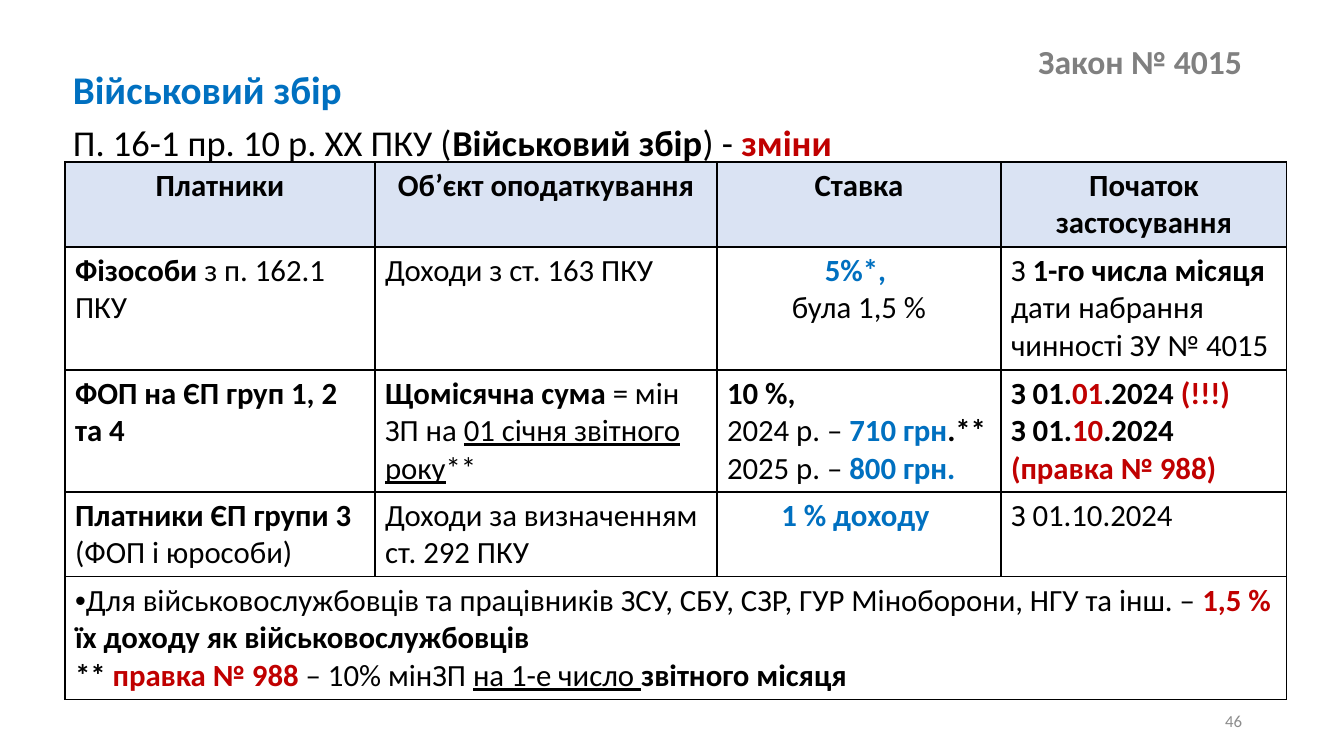
from functools import partial

from lxml.etree import SubElement
from pptx import Presentation
from pptx.dml.color import RGBColor
from pptx.enum.text import MSO_ANCHOR as Anchor, PP_ALIGN as Align
from pptx.oxml.ns import qn
from pptx.util import Emu, Pt

EMU_PER_PX = 914400 / 100.8
FONT = "Calibri"
BLACK = RGBColor(0x00, 0x00, 0x00)
BLUE = RGBColor(0x00, 0x70, 0xC0)
RED = RGBColor(0xC0, 0x00, 0x00)
GREY = RGBColor(0x80, 0x80, 0x80)
PAGE_GREY = RGBColor(0x8C, 0x8C, 0x8C)
HEADER_FILL = RGBColor(0xDA, 0xE3, 0xF3)

COLUMNS = [310, 342, 284, 286]
ROWS = [85, 123, 122, 85, 123]
HEADINGS = ["Платники", "Об’єкт оподаткування", "Ставка", "Початок застосування"]


def px(length):
    return Emu(round(length * EMU_PER_PX))


def styled(text, color=BLACK, bold=False, underline=False, size=None):
    return text, dict(color=color, bold=bold, underline=underline, size=size)


plain = styled
strong = partial(styled, bold=True)
blue = partial(strong, color=BLUE)
red = partial(strong, color=RED)
underlined = partial(styled, underline=True)


def write_run(paragraph, text, *, size, color=BLACK, bold=False, underline=False):
    run = paragraph.add_run()
    run.text = text
    font = run.font
    font.name, font.size = FONT, Pt(size)
    font.bold, font.underline = bold, underline
    font.color.rgb = color


def write_lines(frame, lines, size, align=Align.LEFT, before=0, spacing=1.0):
    for index, line in enumerate(lines):
        paragraph = frame.add_paragraph() if index else frame.paragraphs[0]
        paragraph.alignment = align
        paragraph.space_before = Pt(before)
        paragraph.line_spacing = spacing
        for text, look in line:
            write_run(paragraph, text, **{**look, "size": look["size"] or size})


def add_text(slide, box, lines, size, anchor=Anchor.TOP, **layout):
    frame = slide.shapes.add_textbox(*map(px, box)).text_frame
    frame.word_wrap = True
    frame.vertical_anchor = anchor
    write_lines(frame, lines, size, **layout)


def add_borders(cell):
    properties = cell._tc.get_or_add_tcPr()
    for position, side in enumerate(("lnL", "lnR", "lnT", "lnB")):
        border = properties.makeelement(qn(f"a:{side}"), {"w": str(Pt(1))})
        fill = SubElement(border, qn("a:solidFill"))
        SubElement(fill, qn("a:srgbClr"), val=str(BLACK))
        properties.insert(position, border)


def add_bullet(paragraph):
    properties = paragraph._p.get_or_add_pPr()
    properties.set("marL", "0")
    properties.set("indent", "0")
    SubElement(properties, qn("a:buFont"), typeface="Arial")
    SubElement(properties, qn("a:buChar"), char="•")


def add_levy_table(slide, rows, notes):
    table = slide.shapes.add_table(
        len(ROWS), len(COLUMNS), px(65), px(162), px(sum(COLUMNS)), px(sum(ROWS))
    ).table
    for column, width in zip(table.columns, COLUMNS):
        column.width = px(width)
    for row, height in zip(table.rows, ROWS):
        row.height = px(height)
    for cell in table.iter_cells():
        cell.fill.background()
        add_borders(cell)
    for column, heading in enumerate(HEADINGS):
        cell = table.cell(0, column)
        cell.fill.solid()
        cell.fill.fore_color.rgb = HEADER_FILL
        write_lines(cell.text_frame, [[strong(heading)]], 22, Align.CENTER)
    for row, (rate_align, *contents) in enumerate(rows, 1):
        for column, lines in enumerate(contents):
            align = rate_align if HEADINGS[column] == "Ставка" else Align.LEFT
            write_lines(table.cell(row, column).text_frame, lines, 22, align)
    footer = table.cell(len(ROWS) - 1, 0)
    footer.merge(table.cell(len(ROWS) - 1, len(COLUMNS) - 1))
    write_lines(footer.text_frame, notes, 22)
    add_bullet(footer.text_frame.paragraphs[0])


def main():
    deck = Presentation()
    deck.slide_width, deck.slide_height = px(1344), px(756)
    slide = deck.slides.add_slide(deck.slide_layouts[6])

    add_text(slide, (749, 40, 503, 47), [[strong("Закон № 4015", color=GREY)]], 24,
             anchor=Anchor.MIDDLE, align=Align.RIGHT, spacing=0.9)
    add_text(slide, (63, 60, 1231, 114), [
        [blue("Військовий збір", size=28)],
        [plain("П. 16-1 пр. 10 р. ХХ ПКУ ("), strong("Військовий збір"),
         plain(") - "), red("зміни")],
    ], 26, before=6)

    rows = [
        (Align.CENTER,
         [[strong("Фізособи"), plain(" з п. 162.1 ПКУ")]],
         [[plain("Доходи з ст. 163 ПКУ")]],
         [[blue("5%*, ")], [plain("була 1,5 %")]],
         [[plain("З "), strong("1-го числа місяця "),
           plain("дати набрання чинності ЗУ № 4015")]]),
        (Align.LEFT,
         [[strong("ФОП на ЄП груп 1, 2 та 4")]],
         [[strong("Щомісячна сума "), plain("= мін ЗП на "),
           underlined("01 січня звітного року"), plain("**")]],
         [[strong("10 %,")],
          [plain("2024 р. – "), blue("710 грн"), strong(".**")],
          [plain("2025 р. – "), blue("800 грн.")]],
         [[strong("З 01."), red("01"), strong(".2024 "), red("(!!!)")],
          [strong("З 01."), red("10"), strong(".2024 "), red("(правка № 988)")]]),
        (Align.CENTER,
         [[strong("Платники ЄП групи 3 "), plain("(ФОП і юрособи)")]],
         [[plain("Доходи за визначенням ст. 292 ПКУ")]],
         [[blue("1 % доходу ")]],
         [[plain("З 01.10.2024")]]),
    ]
    notes = [
        [plain("Для військовослужбовців та працівників ЗСУ, СБУ, СЗР, "
               "ГУР Міноборони, НГУ та інш. – "),
         red("1,5 %"), strong(" їх доходу як військовослужбовців")],
        [strong("** "), red("правка № 988 "), plain("– 10% мінЗП "),
         underlined("на 1-е число "), strong("звітного місяця")],
    ]
    add_levy_table(slide, rows, notes)
    add_text(slide, (950, 701, 302, 40), [[plain("46", color=PAGE_GREY)]], 12,
             anchor=Anchor.MIDDLE, align=Align.RIGHT)
    deck.save("out.pptx")


if __name__ == "__main__":
    main()
